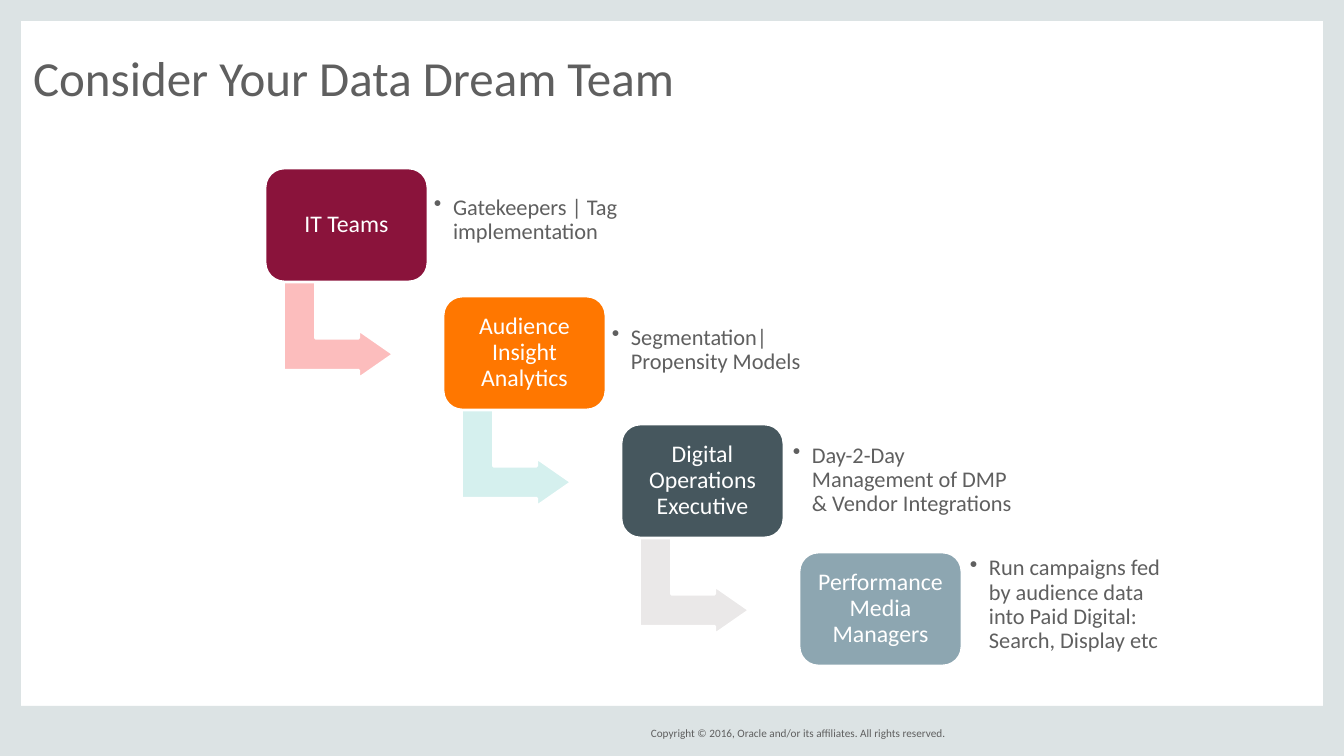
from pptx import Presentation
from pptx.dml.color import RGBColor
from pptx.enum.shapes import MSO_SHAPE as SHAPE
from pptx.enum.text import MSO_ANCHOR as ANCHOR, PP_ALIGN as ALIGN
from pptx.oxml.ns import qn
from pptx.util import Pt
from lxml.etree import SubElement

SCALE = 914400 / 100.8
THEME = {
    "font": "Calibri", "text": "5F5F5F", "white": "FFFFFF", "frame": "DCE3E4",
    "title": 35, "role": 17, "duty": 16, "footer": 8, "outline": 2,
}


def add_block(kind, box, fill, outline=None):
    s = slide.shapes.add_shape(kind, *[round(v * SCALE) for v in box])
    s.shadow.inherit = False
    s.fill.solid()
    s.fill.fore_color.rgb = RGBColor.from_string(fill)
    if outline:
        s.line.color.rgb = RGBColor.from_string(outline)
        s.line.width = Pt(THEME["outline"])
    else:
        s.line.fill.background()
    return s


def write(s, text, size, color, inset=0, anchor=ANCHOR.MIDDLE,
          align=ALIGN.LEFT, spacing=0.9, bullet=False):
    tf = s.text_frame
    frame_format = {"word_wrap": True, "vertical_anchor": anchor}
    for side in ("left", "top", "right", "bottom"):
        frame_format[f"margin_{side}"] = round(inset * SCALE)
    for name, value in frame_format.items():
        setattr(tf, name, value)
    p = tf.paragraphs[0]
    if bullet:
        pPr = p._p.get_or_add_pPr()
        indent = round(19 * SCALE)
        pPr.set("marL", str(indent))
        pPr.set("indent", str(-indent))
        SubElement(pPr, qn("a:buChar")).set("char", "•")
    p.alignment, p.line_spacing = align, spacing
    r = p.add_run()
    r.text = text
    for name, value in {"name": THEME["font"], "size": Pt(size)}.items():
        setattr(r.font, name, value)
    r.font.color.rgb = RGBColor.from_string(color)


prs = Presentation()
prs.slide_width, prs.slide_height = round(1344 * SCALE), round(756 * SCALE)
slide = prs.slides.add_slide(prs.slide_layouts[6])

for box in [(0, 0, 21, 756), (1323, 0, 21, 756), (0, 706, 1344, 50), (0, 0, 1344, 21)]:
    add_block(SHAPE.RECTANGLE, box, THEME["frame"])

labels = [
    ((593, 723, 353, 20), "Copyright © 2016, Oracle and/or its affiliates. All rights reserved.",
     THEME["footer"], {"align": ALIGN.RIGHT, "spacing": 1.0}),
    ((33, 33, 1226, 73), "Consider Your Data Dream Team",
     THEME["title"], {"anchor": ANCHOR.BOTTOM, "spacing": 0.8}),
]
for box, text, size, style in labels:
    s = slide.shapes.add_textbox(*[round(v * SCALE) for v in box])
    write(s, text, size, THEME["text"], **style)

team = [
    ("IT Teams", "8A133B", "FCBDBD", "Gatekeepers | Tag implementation", (427, 174, 298)),
    ("Audience Insight Analytics", "FF7700", "D5F0EE",
     "Segmentation| Propensity Models", (605, 304, 218)),
    ("Digital Operations Executive", "46575E", "EAE8E8",
     "Day-2-Day Management of DMP & Vendor Integrations", (786, 434, 233)),
    ("Performance Media Managers", "8DA6B1", None,
     "Run campaigns fed by audience data into Paid Digital: Search, Display etc",
     (963, 559, 221)),
]
for i, (role, role_fill, arrow_fill, duty, (duty_x, duty_y, duty_w)) in enumerate(team):
    x, y = 265 + 178 * i, 168 + 128 * i
    if arrow_fill:
        arrow = add_block(SHAPE.BENT_UP_ARROW, (x + 25, y + 107, 97, 110),
                          arrow_fill, THEME["white"])
        arrow.rotation = 90
        for n, value in enumerate((0.33, 0.25, 0.36)):
            arrow.adjustments[n] = value
    card = add_block(SHAPE.ROUNDED_RECTANGLE, (x, y, 163, 114), role_fill, THEME["white"])
    card.adjustments[0] = 0.17
    write(card, role, THEME["role"], THEME["white"], inset=13, align=ALIGN.CENTER)
    s = slide.shapes.add_textbox(*[round(v * SCALE) for v in (duty_x, duty_y, duty_w, 92)])
    write(s, duty, THEME["duty"], THEME["text"], inset=7, bullet=True)

prs.save("out.pptx")
